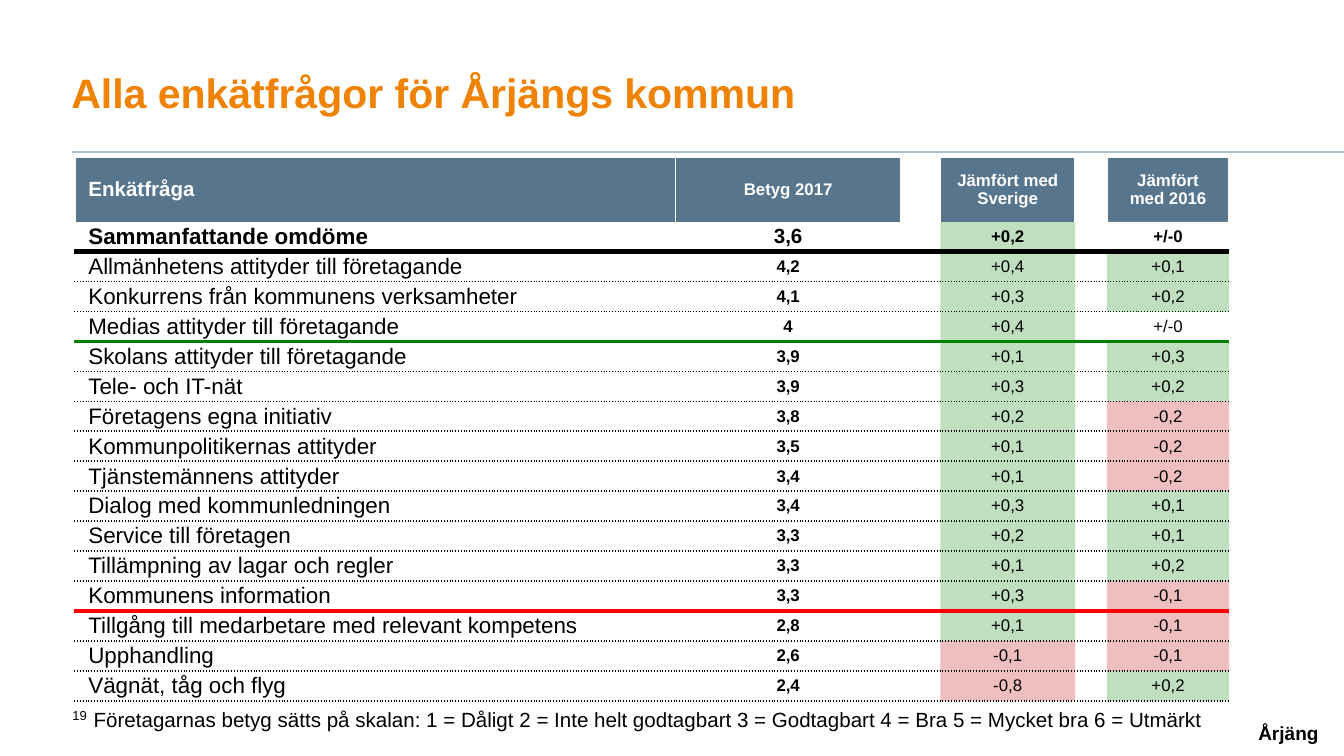
"""Build the slide listing every survey question for Årjäng."""
import pptx
import pptx.dml.color
import pptx.enum.shapes
import pptx.enum.text
import pptx.oxml
import pptx.oxml.ns
import pptx.util
from pptx.util import Cm

ALIGN = pptx.enum.text.PP_ALIGN
ANCHOR = pptx.enum.text.MSO_ANCHOR
BLACK, WHITE, GREEN, RED = "000000", "FFFFFF", "008000", "C00000"
HEADER_BLUE, TITLE_ORANGE, RULE_BLUE = "57758D", "EF8200", "AEC1CF"
GAP_COLUMNS = (2, 4)
COLUMN_WIDTHS = (11.35, 4.25, 0.75, 2.55, 0.6, 2.31)
HEADER_HEIGHT, TABLE_HEIGHT = 1.21, 10.27
DOTTED = (BLACK, 1, "sysDot")
SECTION_LINES = {1: (BLACK, 3, "solid"), 4: (GREEN, 2, "solid"), 13: ("FF0000", 2, "solid")}
HEADINGS = ("Enkätfråga", "Betyg 2017", "", "Jämfört med Sverige", "", "Jämfört med 2016")
QUESTIONS = (
    ("Sammanfattande omdöme", "3,6", "+0,2", "+/-0"),
    ("Allmänhetens attityder till företagande", "4,2", "+0,4", "+0,1"),
    ("Konkurrens från kommunens verksamheter", "4,1", "+0,3", "+0,2"),
    ("Medias attityder till företagande", "4", "+0,4", "+/-0"),
    ("Skolans attityder till företagande", "3,9", "+0,1", "+0,3"),
    ("Tele- och IT-nät", "3,9", "+0,3", "+0,2"),
    ("Företagens egna initiativ", "3,8", "+0,2", "-0,2"),
    ("Kommunpolitikernas attityder", "3,5", "+0,1", "-0,2"),
    ("Tjänstemännens attityder", "3,4", "+0,1", "-0,2"),
    ("Dialog med kommunledningen", "3,4", "+0,3", "+0,1"),
    ("Service till företagen", "3,3", "+0,2", "+0,1"),
    ("Tillämpning av lagar och regler", "3,3", "+0,1", "+0,2"),
    ("Kommunens information", "3,3", "+0,3", "-0,1"),
    ("Tillgång till medarbetare med relevant kompetens", "2,8", "+0,1", "-0,1"),
    ("Upphandling", "2,6", "-0,1", "-0,1"),
    ("Vägnät, tåg och flyg", "2,4", "-0,8", "+0,2"),
)


def rgb(color):
    """Turn a hex string into a colour."""
    return pptx.dml.color.RGBColor.from_string(color)


def apply_format(target, values):
    """Set each attribute of the target from a dict."""
    for attribute, value in values.items():
        setattr(target, attribute, value)


def write(frame, text, size, color=BLACK, bold=False, align=ALIGN.LEFT):
    """Put one formatted paragraph into a text frame."""
    paragraph = frame.paragraphs[0]
    paragraph.alignment = align
    if not text:
        paragraph._p.get_or_add_endParaRPr().set("sz", str(size * 100))
        return
    run = paragraph.add_run()
    run.text = text
    apply_format(run.font, {"name": "Arial", "size": pptx.util.Pt(size), "bold": bold})
    run.font.color.rgb = rgb(color)


def add_label(slide, place, text, frame_format, **style):
    """Add a text box with one line of text."""
    label = slide.shapes.add_textbox(*map(Cm, place))
    apply_format(label.text_frame, frame_format)
    write(label.text_frame, text, **style)


def add_title(slide, text):
    """Place and fill the title."""
    title = slide.shapes.title
    apply_format(title, {"left": Cm(1.35), "top": Cm(0.38), "width": Cm(18.97), "height": Cm(1.93)})
    apply_format(title.text_frame, {
        "margin_left": 0, "margin_right": 0, "margin_top": 0, "margin_bottom": Cm(0.1),
        "vertical_anchor": ANCHOR.BOTTOM, "word_wrap": True,
        "auto_size": pptx.enum.text.MSO_AUTO_SIZE.NONE})
    write(title.text_frame, text, 22, TITLE_ORANGE, True)


def add_rule(slide):
    """Draw the thin line below the title."""
    rule = slide.shapes.add_connector(
        pptx.enum.shapes.MSO_CONNECTOR.STRAIGHT, Cm(1.37), Cm(2.87), Cm(25.4), Cm(2.87))
    rule.line.color.rgb = rgb(RULE_BLUE)
    rule.line.width = pptx.util.Pt(1)
    rule._element.spPr.append(pptx.oxml.parse_xml(f"<a:effectLst {pptx.oxml.ns.nsdecls('a')}/>"))


def set_border(cell, side, border):
    """Give one side of a cell a border, or none."""
    content = "<a:noFill/>"
    width = 0
    if border:
        color, width, dash = border
        content = f'<a:solidFill><a:srgbClr val="{color}"/></a:solidFill><a:prstDash val="{dash}"/>'
    cell._tc.get_or_add_tcPr().append(pptx.oxml.parse_xml(
        f'<a:ln{side} {pptx.oxml.ns.nsdecls("a")} w="{width * 12700}">{content}</a:ln{side}>'))


def set_fill(cell, color, opacity=100):
    """Fill a cell, transparent if the opacity is below 100 percent."""
    if color is None:
        cell.fill.background()
        return
    cell.fill.solid()
    cell.fill.fore_color.rgb = rgb(color)
    if opacity < 100:
        swatch = cell._tc.tcPr.find(f".//{pptx.oxml.ns.qn('a:solidFill')}[last()]/{pptx.oxml.ns.qn('a:srgbClr')}")
        for swatch in cell._tc.tcPr.findall(f"{pptx.oxml.ns.qn('a:solidFill')}/{pptx.oxml.ns.qn('a:srgbClr')}"):
            swatch.append(pptx.oxml.parse_xml(
                f'<a:alpha {pptx.oxml.ns.nsdecls("a")} val="{opacity * 1000}"/>'))


def change_color(change):
    """Choose the colour for a rise, a fall or no change."""
    if change.startswith("+/-"):
        return WHITE
    return RED if change.startswith("-") else GREEN


def row_line(row):
    """Return the line below a row."""
    return SECTION_LINES.get(row, DOTTED) if row else None


def format_cell(cell, row, column, text):
    """Write, border and fill one cell by its place in the table."""
    white_line = (WHITE, 1, "solid")
    side_line = white_line if row == 0 or column < 2 else None
    top_line = row_line(row - 1) if row else white_line
    for side, border in zip("LRTB", (side_line, side_line, top_line, row_line(row))):
        set_border(cell, side, border)
    apply_format(cell, {
        "margin_left": Cm(0.25), "margin_right": Cm(0.25), "margin_top": 0, "margin_bottom": 0,
        "vertical_anchor": ANCHOR.MIDDLE})
    if row == 0:
        size = 11 if column == 0 else 9
        set_fill(cell, None if column in GAP_COLUMNS else HEADER_BLUE)
    else:
        size = 12 if column == 0 else 11 if (row, column) == (1, 1) else 9
        if column in (3, 5):
            set_fill(cell, change_color(text), 25)
        else:
            set_fill(cell, None)
    write(cell.text_frame, text, size, BLACK if row else WHITE, row < 2 or column == 1,
          ALIGN.CENTER if column else ALIGN.LEFT)


def add_questions(slide):
    """Add the table of grades and comparisons."""
    rows = [HEADINGS] + [(question, grade, "", sweden, "", earlier)
                         for question, grade, sweden, earlier in QUESTIONS]
    questions = slide.shapes.add_table(
        len(rows), len(HEADINGS), Cm(1.42), Cm(2.98), Cm(sum(COLUMN_WIDTHS)), Cm(TABLE_HEIGHT)).table
    apply_format(questions, {"first_row": False, "horz_banding": False})
    for column, width in zip(questions.columns, COLUMN_WIDTHS):
        column.width = Cm(width)
    for row, texts in enumerate(rows):
        questions.rows[row].height = Cm(
            (TABLE_HEIGHT - HEADER_HEIGHT) / len(QUESTIONS) if row else HEADER_HEIGHT)
        for column, text in enumerate(texts):
            format_cell(questions.cell(row, column), row, column, text)


def main():
    """Build and save the slide."""
    deck = pptx.Presentation()
    apply_format(deck, {"slide_width": Cm(25.4), "slide_height": Cm(14.29)})
    slide = deck.slides.add_slide(deck.slide_layouts[5])
    add_rule(slide)
    add_title(slide, "Alla enkätfrågor för Årjängs kommun")
    add_label(slide, (13.16, 13.31, 11.76, 0.76), "Årjäng", {
        "margin_left": 0, "margin_right": 0, "margin_top": 0, "margin_bottom": 0,
        "vertical_anchor": ANCHOR.BOTTOM, "word_wrap": True}, size=10.2, bold=True, align=ALIGN.RIGHT)
    add_label(slide, (1.12, 13.36, 0.86, 0.33), "19",
              {"vertical_anchor": ANCHOR.MIDDLE, "word_wrap": True}, size=7)
    add_label(slide, (1.52, 13.23, 21.54, 0.74),
              "Företagarnas betyg sätts på skalan: 1 = Dåligt 2 = Inte helt godtagbart "
              "3 = Godtagbart 4 = Bra 5 = Mycket bra 6 = Utmärkt",
              {"word_wrap": False, "auto_size": pptx.enum.text.MSO_AUTO_SIZE.SHAPE_TO_FIT_TEXT}, size=11)
    add_questions(slide)
    deck.save("out.pptx")


if __name__ == "__main__":
    main()
